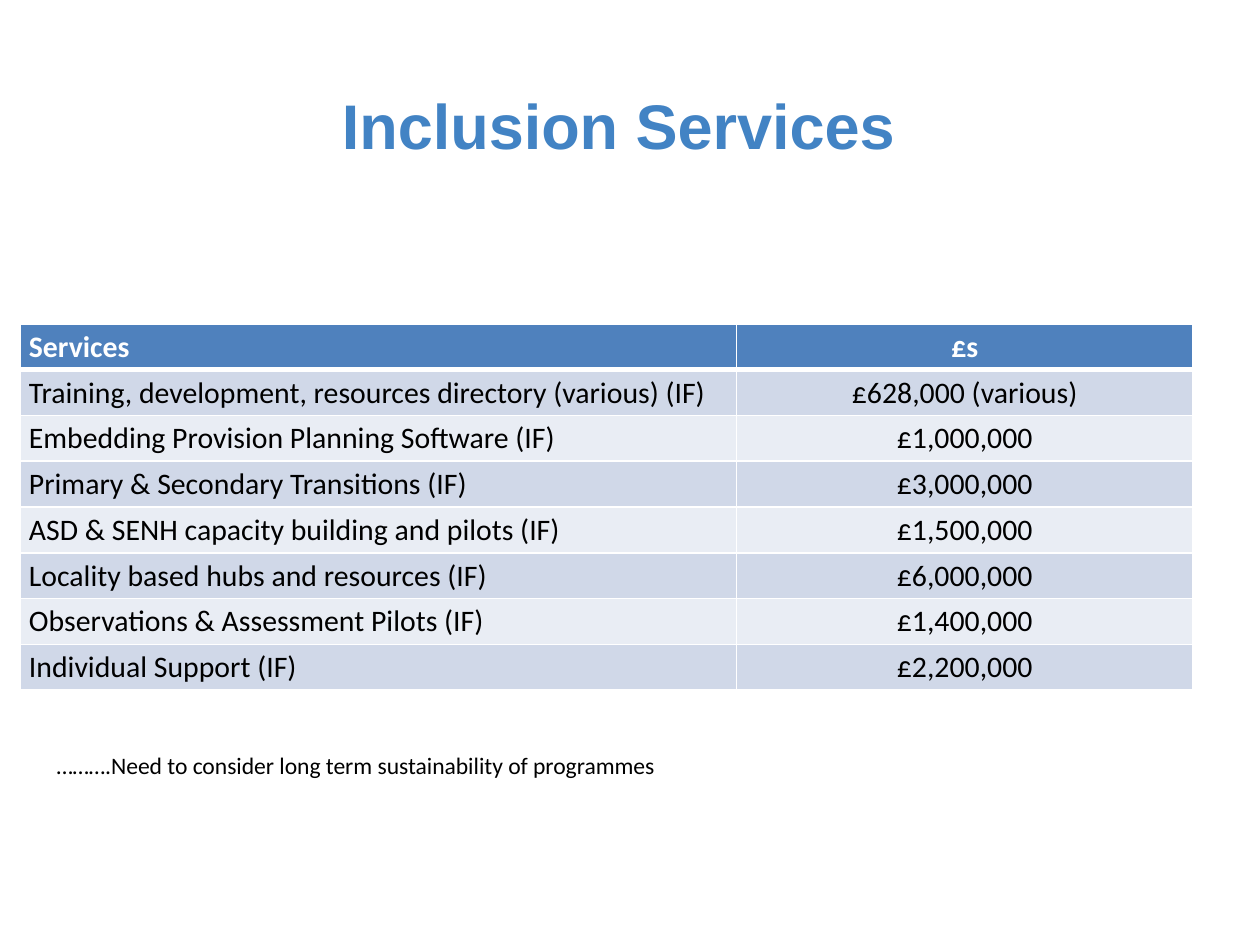
from lxml.etree import SubElement
from pptx import Presentation
from pptx.dml.color import RGBColor
from pptx.enum.text import PP_ALIGN
from pptx.oxml.ns import qn
from pptx.util import Inches, Pt

SPEND = [
    ("Services", "£s"),
    ("Training, development, resources directory (various) (IF)",
     "£628,000 (various)"),
    ("Embedding Provision Planning Software (IF)", "£1,000,000"),
    ("Primary & Secondary Transitions (IF)", "£3,000,000"),
    ("ASD & SENH capacity building and pilots (IF)", "£1,500,000"),
    ("Locality based hubs and resources (IF)", "£6,000,000"),
    ("Observations & Assessment Pilots (IF)", "£1,400,000"),
    ("Individual Support (IF)", "£2,200,000"),
]


def color(code):
    return RGBColor.from_string(code)


def write(frame, text, size=17, font="Calibri", ink="000000", bold=False,
          align=PP_ALIGN.LEFT):
    frame.word_wrap = True
    par = frame.paragraphs[0]
    par.alignment = align
    run = par.add_run()
    run.text = text
    face = run.font
    face.size, face.name, face.bold = Pt(size), font, bold
    face.color.rgb = color(ink)


def border(cell, **widths):
    """Draw white cell edges; widths in points, keyed by side L, R, T, B."""
    props = cell._tc.get_or_add_tcPr()
    for side, width in widths.items():
        line = SubElement(props, qn(f"a:ln{side}"), w=str(Pt(width)))
        fill = SubElement(line, qn("a:solidFill"))
        SubElement(fill, qn("a:srgbClr"), val="FFFFFF")


class Deck:
    """Slide and style; lengths are percentages of the slide's size."""
    head = "4F81BD"
    bands = ("E9EDF4", "D0D8E8")
    title = "4283C4"

    def __init__(self):
        self.file = Presentation()
        self.file.slide_width, self.file.slide_height = Inches(10), Inches(7.5)
        self.slide = self.file.slides.add_slide(self.file.slide_layouts[6])

    def across(self, share):
        return round(self.file.slide_width * share / 100)

    def down(self, share):
        return round(self.file.slide_height * share / 100)

    def label(self, text, left, top, width, height, **style):
        box = self.slide.shapes.add_textbox(
            self.across(left), self.down(top),
            self.across(width), self.down(height))
        write(box.text_frame, text, **style)

    def table(self, rows, left, top, widths, pitch):
        grid = self.slide.shapes.add_table(
            len(rows), len(widths), self.across(left), self.down(top),
            self.across(sum(widths)), self.down(pitch * len(rows))).table
        for col, width in zip(grid.columns, widths):
            col.width = self.across(width)
        for i, row in enumerate(rows):
            grid.rows[i].height = self.down(pitch)
            for j, text in enumerate(row):
                self.cell(grid.cell(i, j), text, i, j)

    def cell(self, cell, text, row, col):
        header = row == 0
        cell.margin_left = cell.margin_right = Inches(0.07)
        cell.margin_top = cell.margin_bottom = Inches(0.04)
        border(cell, L=1, R=1, T=3 if row == 1 else 1, B=3 if header else 1)
        cell.fill.solid()
        cell.fill.fore_color.rgb = color(
            self.head if header else self.bands[row % 2])
        write(cell.text_frame, text, bold=header,
              ink="FFFFFF" if header else "000000",
              align=PP_ALIGN.CENTER if col else PP_ALIGN.LEFT)


def main():
    deck = Deck()
    deck.label("……….Need to consider long term sustainability of programmes",
               3.5, 78.8, 91.2, 4.4, size=13.5)
    deck.table(SPEND, 1.6, 34.27, (56.85, 36.25), 4.78)
    deck.label("Inclusion Services", 1.6, 8.53, 95, 16.67, size=36,
               font="Arial", ink=deck.title, bold=True, align=PP_ALIGN.CENTER)
    deck.file.save("out.pptx")


if __name__ == "__main__":
    main()
